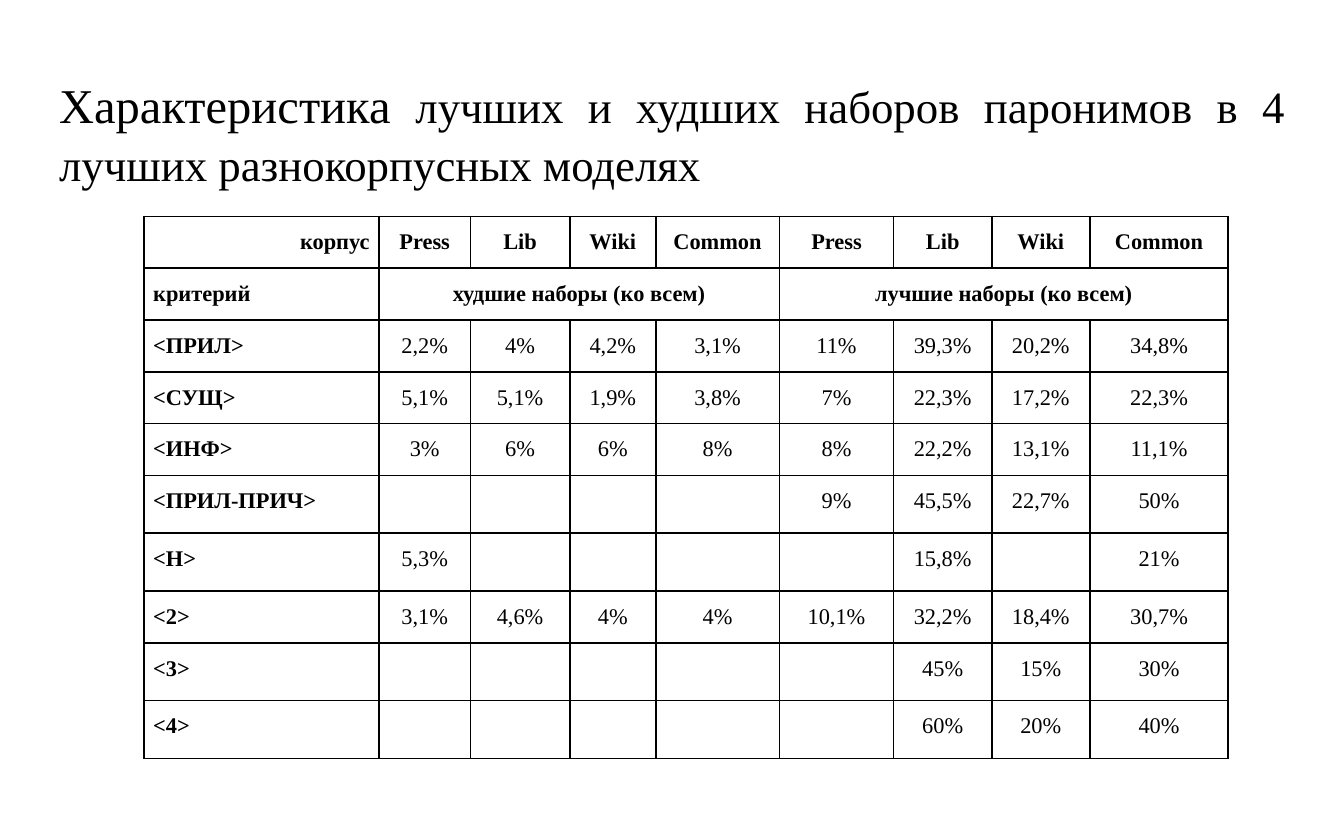
from lxml.etree import SubElement
from pptx import Presentation
from pptx.dml.color import RGBColor
from pptx.enum.text import MSO_ANCHOR, PP_ALIGN
from pptx.oxml.ns import qn
from pptx.util import Emu, Pt

BLACK = RGBColor(0, 0, 0)
FONT = "Times New Roman"
PX = 9144  # 100 px to the inch
BORDER = Pt(1)

TITLE_BOX = (34, 42, 932, 70)
TITLE_RUNS = [
    ("Характеристика", 26),
    (" лучших и худших наборов паронимов в 4 лучших разнокорпусных моделях", 24),
]

TABLE_BOX = (107, 161, 806, 405)
COLUMN_WIDTHS = [175, 68, 74, 64, 92, 85, 73, 73, 103]
FULL_ROW, SPARSE_ROW = 38, 43
CORPORA = ["Press", "Lib", "Wiki", "Common"]
ROWS = [
    ["корпус", *CORPORA, *CORPORA],
    ["критерий", "худшие наборы (ко всем)", "", "", "",
     "лучшие наборы (ко всем)", "", "", ""],
    ["<ПРИЛ>", "2,2%", "4%", "4,2%", "3,1%", "11%", "39,3%", "20,2%", "34,8%"],
    ["<СУЩ>", "5,1%", "5,1%", "1,9%", "3,8%", "7%", "22,3%", "17,2%", "22,3%"],
    ["<ИНФ>", "3%", "6%", "6%", "8%", "8%", "22,2%", "13,1%", "11,1%"],
    ["<ПРИЛ-ПРИЧ>", "", "", "", "", "9%", "45,5%", "22,7%", "50%"],
    ["<Н>", "5,3%", "", "", "", "", "15,8%", "", "21%"],
    ["<2>", "3,1%", "4,6%", "4%", "4%", "10,1%", "32,2%", "18,4%", "30,7%"],
    ["<3>", "", "", "", "", "", "45%", "15%", "30%"],
    ["<4>", "", "", "", "", "", "60%", "20%", "40%"],
]
HEADER_ROWS = 2
GROUP_ROW, GROUP_STARTS = 1, (1, 5)


def px(length):
    return Emu(length * PX)


def add_run(paragraph, text, size, bold=False, italic=False):
    run = paragraph.add_run()
    run.text = text
    font = run.font
    font.name, font.size = FONT, Pt(size)
    font.bold, font.italic = bold, italic
    font.color.rgb = BLACK


def set_margins(target, horizontal, vertical):
    target.margin_left = target.margin_right = px(horizontal)
    target.margin_top = target.margin_bottom = px(vertical)


def add_title(slide, box):
    title = slide.shapes.title
    title.left, title.top, title.width, title.height = map(px, box)
    frame = title.text_frame
    frame.word_wrap = True
    frame.vertical_anchor = MSO_ANCHOR.TOP
    set_margins(frame, 10, 10)
    paragraph = frame.paragraphs[0]
    paragraph.alignment = PP_ALIGN.JUSTIFY
    paragraph.line_spacing = 1.08
    for text, size in TITLE_RUNS:
        add_run(paragraph, text, size)


def style_cell(cell):
    """Give the cell a black border on every side and no fill."""
    properties = cell._tc.get_or_add_tcPr()
    for side in ("a:lnL", "a:lnR", "a:lnT", "a:lnB"):
        line = SubElement(properties, qn(side), w=str(BORDER))
        fill = SubElement(line, qn("a:solidFill"))
        SubElement(fill, qn("a:srgbClr"), val=str(BLACK))
    cell.fill.background()


def write_cell(cell, text, row, column):
    set_margins(cell, 7, 10)
    paragraph = cell.text_frame.paragraphs[0]
    if column:
        paragraph.alignment = PP_ALIGN.CENTER
    else:
        paragraph.alignment = PP_ALIGN.LEFT if row else PP_ALIGN.RIGHT
    bold = row < HEADER_ROWS or column == 0
    if text[1:-1].isdigit() and column == 0:
        add_run(paragraph, text[0], 12, bold, italic=True)
        text = text[1:]
    add_run(paragraph, text, 12, bold)


def add_criteria_table(slide, box):
    frame = slide.shapes.add_table(len(ROWS), len(COLUMN_WIDTHS), *map(px, box))
    table = frame.table
    table.first_row = table.horz_banding = False
    for column, width in zip(table.columns, COLUMN_WIDTHS):
        column.width = px(width)
    for row, texts in enumerate(ROWS):
        sparse = row != GROUP_ROW and "" in texts
        table.rows[row].height = px(SPARSE_ROW if sparse else FULL_ROW)
        for column, text in enumerate(texts):
            cell = table.cell(row, column)
            style_cell(cell)
            if text:
                write_cell(cell, text, row, column)
    for start in GROUP_STARTS:
        last = table.cell(GROUP_ROW, start + len(CORPORA) - 1)
        table.cell(GROUP_ROW, start).merge(last)


def main():
    presentation = Presentation()
    presentation.slide_width, presentation.slide_height = px(1000), px(625)
    slide = presentation.slides.add_slide(presentation.slide_layouts[5])
    add_title(slide, TITLE_BOX)
    add_criteria_table(slide, TABLE_BOX)
    presentation.save("out.pptx")


if __name__ == "__main__":
    main()
